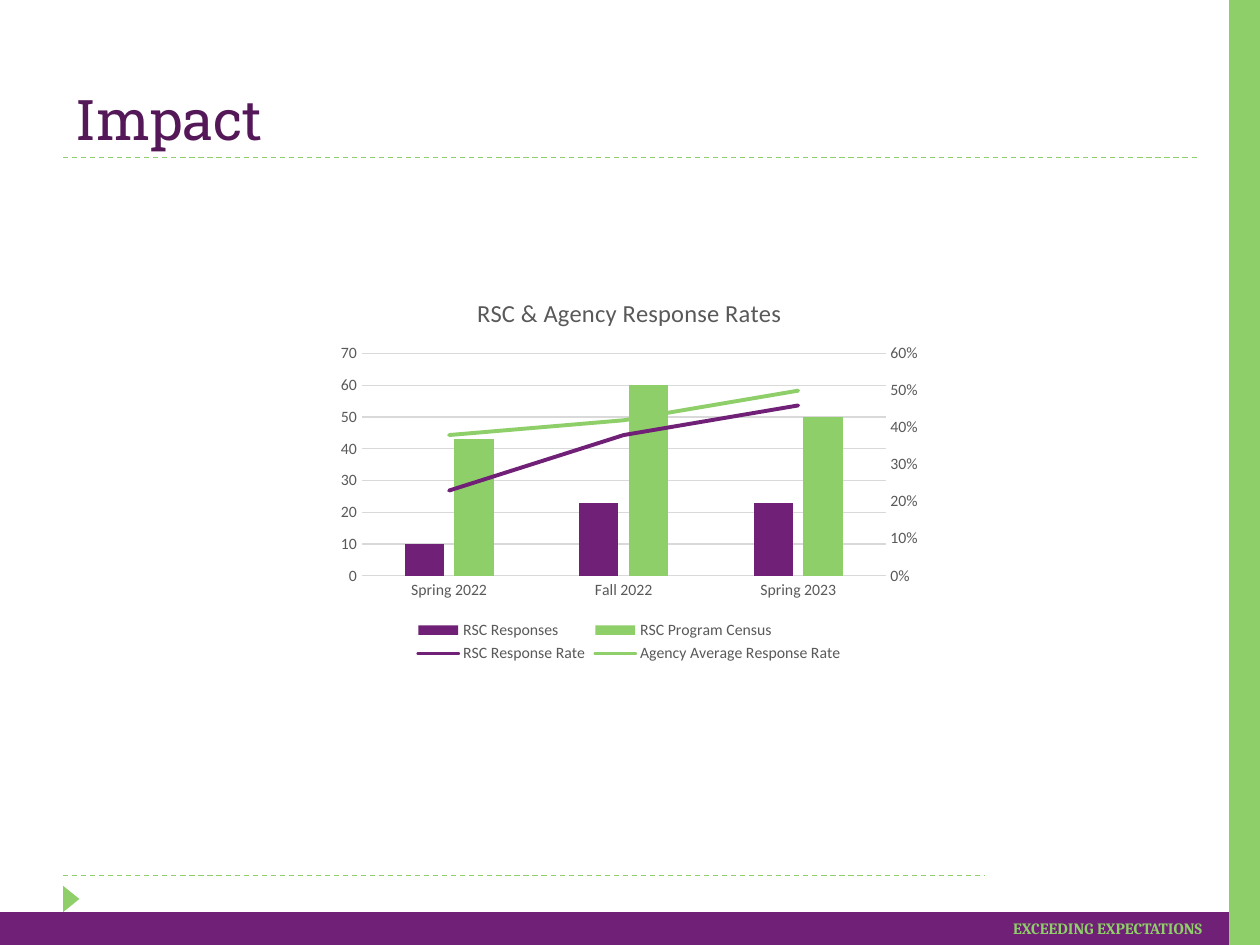
from dataclasses import dataclass

from lxml.etree import SubElement
from pptx import Presentation
from pptx.chart.data import CategoryChartData
from pptx.dml.color import RGBColor
from pptx.enum.chart import XL_CHART_TYPE, XL_LEGEND_POSITION, XL_MARKER_STYLE, XL_TICK_MARK
from pptx.enum.dml import MSO_LINE
from pptx.enum.shapes import MSO_CONNECTOR, MSO_SHAPE
from pptx.enum.text import MSO_ANCHOR, PP_ALIGN
from pptx.oxml import parse_xml
from pptx.oxml.ns import nsdecls, qn
from pptx.util import Inches, Pt

COLORS = {
    "purple": "702076",
    "title": "541858",
    "green": "8FCF69",
    "text": "595959",
    "grid": "D9D9D9",
}
WIDTH, HEIGHT = Inches(10), Inches(7.5)
COL, ROW = WIDTH / 40, HEIGHT / 30


@dataclass
class Box:
    """Position and size in grid columns and rows."""
    col: float
    row: float
    cols: float
    rows: float

    def emu(self) -> list[int]:
        return [round(n * unit) for n, unit in
                zip((self.col, self.row, self.cols, self.rows), (COL, ROW, COL, ROW))]


@dataclass
class Block:
    preset: MSO_SHAPE
    box: Box
    color: str
    rotation: float = 0


@dataclass
class Rule:
    row: float
    start: float
    end: float


@dataclass
class Label:
    text: str
    box: Box
    color: str
    font: dict
    align: PP_ALIGN = PP_ALIGN.LEFT
    anchor: MSO_ANCHOR = MSO_ANCHOR.TOP


@dataclass
class Measure:
    name: str
    values: tuple
    color: str
    number_format: str = "General"


BAND = Block(MSO_SHAPE.RECTANGLE, Box(0, 28.96, 40, 1.04), "purple")
RULES = [Rule(27.8, 2, 31.28), Rule(5, 2, 38)]
GREEN_BLOCKS = [
    Block(MSO_SHAPE.FLOWCHART_PROCESS, Box(39, 0, 1, 30), "green"),
    Block(MSO_SHAPE.ISOSCELES_TRIANGLE, Box(1.84, 28.28, 0.84, 0.52), "green", 90),
]
LABELS = [
    Label("EXCEEDING EXPECTATIONS", Box(31, 28.96, 8.32, 1), "green",
          {"name": "Cambria", "size": Pt(9), "bold": True}, PP_ALIGN.CENTER),
    Label("Impact", Box(2, 1, 36, 4), "title",
          {"name": "Roboto Slab", "size": Pt(32)}, anchor=MSO_ANCHOR.BOTTOM),
]
TERMS = ("Spring 2022", "Fall 2022", "Spring 2023")
COUNTS = [
    Measure("RSC Responses", (10, 23, 23), "purple"),
    Measure("RSC Program Census ", (43, 60, 50), "green"),
]
RATES = [
    Measure("RSC Response Rate", (0.23, 0.38, 0.46), "purple", "0%"),
    Measure("Agency Average Response Rate", (0.38, 0.42, 0.5), "green", "0%"),
]
RATE_AXIS_IDS = ("50010", "50020")


def rgb(color: str) -> RGBColor:
    return RGBColor.from_string(COLORS[color])


def set_font(font, color: str, values: dict) -> None:
    for attribute, value in values.items():
        setattr(font, attribute, value)
    font.color.rgb = rgb(color)


def draw_block(slide, block: Block) -> None:
    shape = slide.shapes.add_shape(block.preset, *block.box.emu())
    shape.shadow.inherit = False
    shape.rotation = block.rotation
    shape.fill.solid()
    shape.fill.fore_color.rgb = rgb(block.color)
    shape.line.fill.background()


def draw_rule(slide, rule: Rule) -> None:
    y = round(rule.row * ROW)
    line = slide.shapes.add_connector(
        MSO_CONNECTOR.STRAIGHT, round(rule.start * COL), y, round(rule.end * COL), y)
    line.line.color.rgb = rgb("green")
    line.line.width = Pt(0.75)
    line.line.dash_style = MSO_LINE.DASH
    SubElement(line._element.spPr, qn("a:effectLst"))


def draw_label(slide, label: Label) -> None:
    frame = slide.shapes.add_textbox(*label.box.emu()).text_frame
    frame.word_wrap = True
    frame.vertical_anchor = label.anchor
    paragraph = frame.paragraphs[0]
    paragraph.alignment = label.align
    run = paragraph.add_run()
    run.text = label.text
    set_font(run.font, label.color, label.font)


def move_rates_to_right_axis(chart) -> None:
    """Turn the rate columns into lines on a second value axis."""
    bars = chart._chartSpace.find(".//" + qn("c:barChart"))
    cat_id, val_id = RATE_AXIS_IDS
    # The category axis must be listed before the value axis
    lines = parse_xml(
        f'<c:lineChart {nsdecls("c")}><c:grouping val="standard"/><c:varyColors val="0"/>'
        f'<c:marker val="1"/><c:axId val="{cat_id}"/><c:axId val="{val_id}"/></c:lineChart>')
    for series in bars.findall(qn("c:ser"))[len(COUNTS):]:
        invert = series.find(qn("c:invertIfNegative"))
        if invert is not None:
            series.remove(invert)
        lines.find(qn("c:marker")).addprevious(series)
    bars.addnext(lines)

    def axis(tag: str, own: str, cross: str, hidden: int, side: str, crosses: str):
        return parse_xml(
            f'<c:{tag} {nsdecls("c")}><c:axId val="{own}"/>'
            f'<c:scaling><c:orientation val="minMax"/></c:scaling><c:delete val="{hidden}"/>'
            f'<c:axPos val="{side}"/><c:numFmt formatCode="0%" sourceLinked="0"/>'
            '<c:majorTickMark val="none"/><c:minorTickMark val="none"/>'
            f'<c:tickLblPos val="nextTo"/><c:crossAx val="{cross}"/>'
            f'<c:crosses val="{crosses}"/></c:{tag}>')

    right = axis("valAx", val_id, cat_id, 0, "r", "max")
    chart.value_axis._element.addnext(right)
    right.addnext(axis("catAx", cat_id, val_id, 1, "b", "autoZero"))
    # The right axis takes the same style as the left one
    value_axis_type = type(chart.value_axis)
    style_axis(value_axis_type(right))


def style_axis(axis) -> None:
    axis.major_tick_mark = axis.minor_tick_mark = XL_TICK_MARK.NONE
    set_font(axis.tick_labels.font, "text", {"name": "Calibri", "size": Pt(9)})
    axis.format.line.fill.background()


def draw_chart(slide, box: Box) -> None:
    data = CategoryChartData()
    data.categories = TERMS
    for measure in COUNTS + RATES:
        data.add_series(measure.name, measure.values, measure.number_format)
    chart = slide.shapes.add_chart(XL_CHART_TYPE.COLUMN_CLUSTERED, *box.emu(), data).chart
    chart.font.name, chart.font.size = "Calibri", Pt(10)

    # Title and legend
    chart.has_title = True
    title = chart.chart_title.text_frame.paragraphs[0].add_run()
    title.text = "RSC & Agency Response Rates"
    set_font(title.font, "text", {"name": "Calibri", "size": Pt(14), "bold": False})
    chart.has_legend = True
    chart.legend.position = XL_LEGEND_POSITION.BOTTOM
    chart.legend.include_in_layout = False
    set_font(chart.legend.font, "text", {"name": "Calibri", "size": Pt(9)})

    # Axes
    for axis in (chart.category_axis, chart.value_axis):
        style_axis(axis)
    for line in (chart.category_axis.format.line, chart.value_axis.major_gridlines.format.line):
        line.color.rgb = rgb("grid")
        line.width = Pt(0.75)
    move_rates_to_right_axis(chart)

    # Series
    columns, lines = chart.plots
    columns.gap_width, columns.overlap = 219, -27
    columns.vary_by_categories = False
    for series, measure in zip(columns.series, COUNTS):
        series.format.fill.solid()
        series.format.fill.fore_color.rgb = rgb(measure.color)
    for series, measure in zip(lines.series, RATES):
        series.format.line.color.rgb = rgb(measure.color)
        series.format.line.width = Pt(2.25)
        series._element.find(".//" + qn("a:ln")).set("cap", "rnd")
        series.marker.style = XL_MARKER_STYLE.NONE
        series.smooth = False


def main() -> None:
    deck = Presentation()
    deck.slide_width, deck.slide_height = WIDTH, HEIGHT
    slide = deck.slides.add_slide(deck.slide_layouts[6])
    draw_block(slide, BAND)
    for rule in RULES:
        draw_rule(slide, rule)
    for block in GREEN_BLOCKS:
        draw_block(slide, block)
    for label in LABELS:
        draw_label(slide, label)
    draw_chart(slide, Box(10.44, 8.8, 19.08, 12.4))
    deck.save("out.pptx")


if __name__ == "__main__":
    main()
